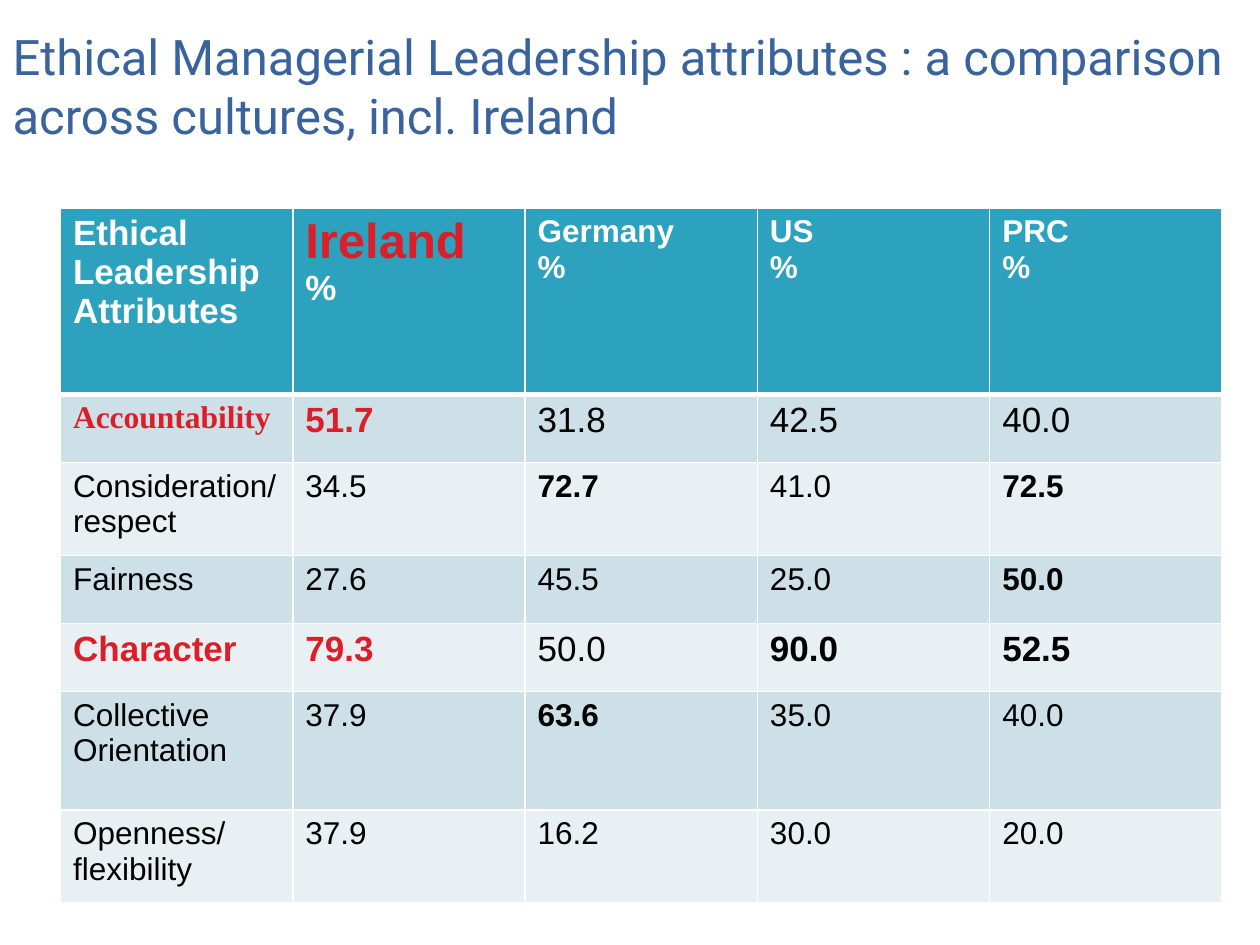
from lxml.etree import SubElement
from pptx import Presentation
from pptx.dml.color import RGBColor
from pptx.enum.text import MSO_ANCHOR, MSO_AUTO_SIZE, PP_ALIGN
from pptx.oxml.ns import qn
from pptx.util import Inches, Pt

COLORS = {
    "title": "39639D",
    "header": "2DA2BF",
    "odd": "CDE0E8",
    "even": "E8F0F4",
    "white": "FFFFFF",
    "black": "000000",
    "red": "DA1F28",
}


def add_span(para, text, size, color, bold=False, font="Arial"):
    span = para.add_run()
    span.text = text
    span.font.size = Pt(size)
    span.font.name = font
    span.font.bold = bold
    span.font.color.rgb = RGBColor.from_string(COLORS[color])


def add_border(cell, side, points):
    properties = cell._tc.get_or_add_tcPr()
    line = SubElement(properties, qn(f"a:{side}"), w=str(Pt(points)))
    fill = SubElement(line, qn("a:solidFill"))
    SubElement(fill, qn("a:srgbClr"), val=COLORS["white"])


deck = Presentation()
deck.slide_width = Inches(10)
deck.slide_height = Inches(7.5)
page = deck.slides.add_slide(deck.slide_layouts[5])

title = page.shapes.title
title.left, title.top = Inches(0), Inches(0)
title.width, title.height = Inches(10), Inches(1.65)
frame = title.text_frame
frame.word_wrap = True
frame.auto_size = MSO_AUTO_SIZE.NONE
frame.vertical_anchor = MSO_ANCHOR.MIDDLE
frame.margin_bottom = Inches(0.34)
para = frame.paragraphs[0]
para.alignment = PP_ALIGN.LEFT
add_span(
    para,
    "Ethical Managerial Leadership attributes : a comparison across cultures, incl. Ireland",
    28, "title", font="Roboto",
)

rows = [
    ["Ethical Leadership\nAttributes", "Ireland\n%", "Germany\n%", "US\n%", "PRC\n%"],
    ["Accountability", "51.7", "31.8", "42.5", "40.0"],
    ["Consideration/respect", "34.5", "72.7", "41.0", "72.5"],
    ["Fairness", "27.6", "45.5", "25.0", "50.0"],
    ["Character", "79.3", "50.0", "90.0", "52.5"],
    ["Collective Orientation", "37.9", "63.6", "35.0", "40.0"],
    ["Openness/\nflexibility", "37.9", "16.2", "30.0", "20.0"],
]
row_heights = [1.48, 0.54, 0.74, 0.54, 0.54, 0.94, 0.74]
key_rows = {1, 4}
bold_values = {(2, 2), (2, 4), (3, 4), (4, 3), (4, 4), (5, 2)}

table = page.shapes.add_table(
    len(rows), len(rows[0]), Inches(0.48), Inches(1.65), Inches(9.22), Inches(5.52)
).table
for column in table.columns:
    column.width = Inches(9.22 / len(rows[0]))

for row, (texts, height) in enumerate(zip(rows, row_heights)):
    table.rows[row].height = Inches(height)
    band = "header" if row == 0 else "odd" if row % 2 else "even"
    for col, text in enumerate(texts):
        cell = table.cell(row, col)
        add_border(cell, "lnL", 1)
        add_border(cell, "lnR", 1)
        add_border(cell, "lnT", 3 if row == 1 else 1)
        add_border(cell, "lnB", 3 if row == 0 else 1)
        cell.fill.solid()
        cell.fill.fore_color.rgb = RGBColor.from_string(COLORS[band])

        highlighted = row in key_rows and col < 2
        bold = row == 0 or highlighted or (row, col) in bold_values
        color = "white" if row == 0 else "red" if highlighted else "black"
        large = row in key_rows or (row == 0 and col < 2)
        for index, line in enumerate(text.split("\n")):
            frame = cell.text_frame
            para = frame.add_paragraph() if index else frame.paragraphs[0]
            if line == "Ireland":
                add_span(para, line, 28, "red", True)
            elif line == "Accountability":
                add_span(para, line, 18, color, bold, "Times New Roman")
            else:
                add_span(para, line, 20 if large else 18, color, bold)

deck.save("out.pptx")
